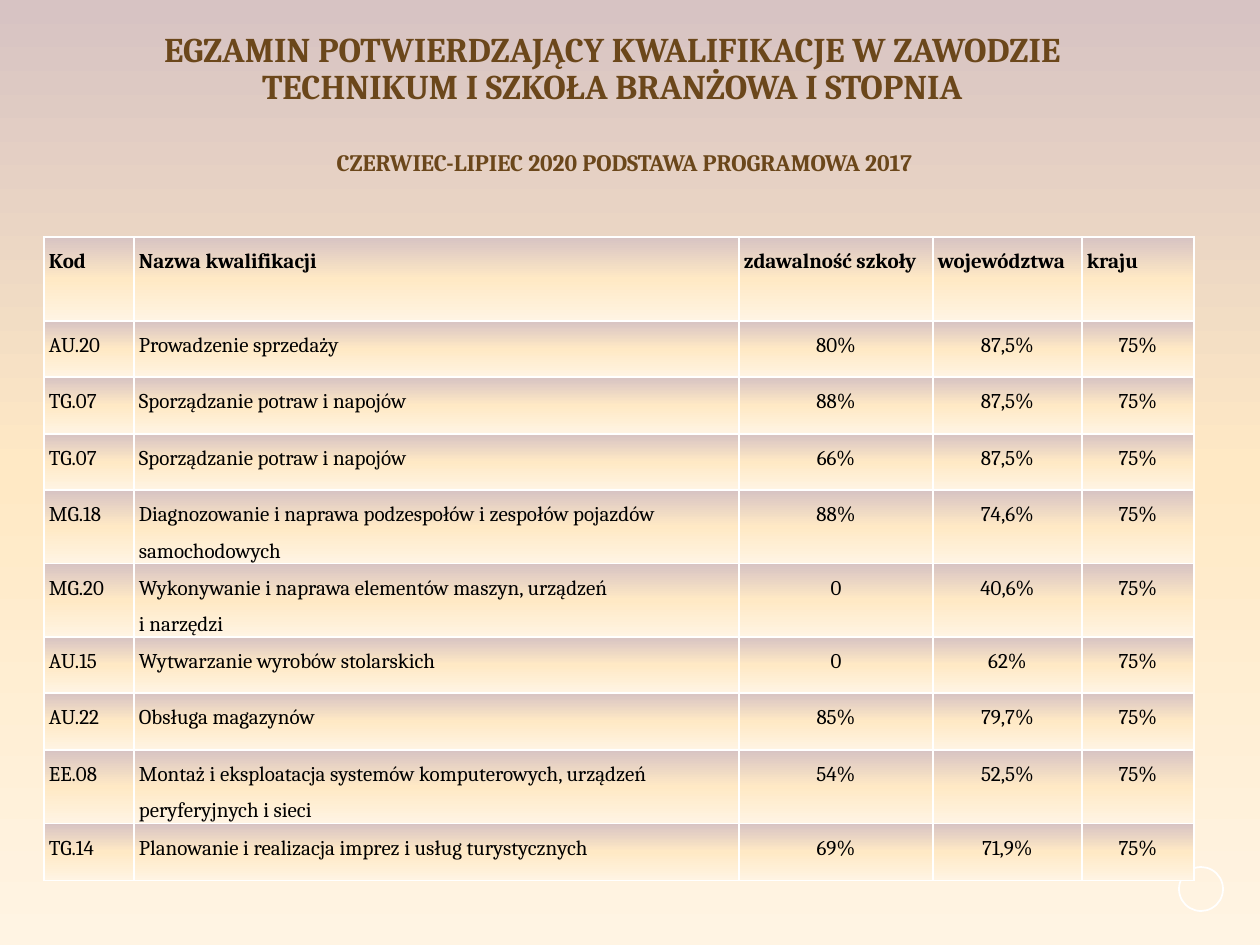
from copy import deepcopy

from lxml.etree import SubElement
from pptx import Presentation
from pptx.dml.color import RGBColor
from pptx.enum.shapes import MSO_SHAPE
from pptx.enum.text import MSO_ANCHOR, MSO_AUTO_SIZE, PP_ALIGN
from pptx.oxml.ns import qn
from pptx.util import Pt

# Content
TITLE = ("EGZAMIN POTWIERDZAJĄCY KWALIFIKACJE W ZAWODZIE\v"
         "TECHNIKUM I SZKOŁA BRANŻOWA I STOPNIA")
SUBTITLE = "CZERWIEC-LIPIEC 2020 PODSTAWA PROGRAMOWA 2017"
HEADER = ("Kod", "Nazwa kwalifikacji", "zdawalność szkoły", "województwa", "kraju")
RESULTS = [
    ("AU.20", "Prowadzenie sprzedaży", "80%", "87,5%", "75%"),
    ("TG.07", "Sporządzanie potraw i napojów", "88%", "87,5%", "75%"),
    ("TG.07", "Sporządzanie potraw i napojów", "66%", "87,5%", "75%"),
    ("MG.18", "Diagnozowanie i naprawa podzespołów i zespołów pojazdów samochodowych",
     "88%", "74,6%", "75%"),
    ("MG.20", "Wykonywanie i naprawa elementów maszyn, urządzeń\vi narzędzi",
     "0", "40,6%", "75%"),
    ("AU.15", "Wytwarzanie wyrobów stolarskich", "0", "62%", "75%"),
    ("AU.22", "Obsługa magazynów", "85%", "79,7%", "75%"),
    ("EE.08", "Montaż i eksploatacja systemów komputerowych, urządzeń peryferyjnych i sieci",
     "54%", "52,5%", "75%"),
    ("TG.14", "Planowanie i realizacja imprez i usług turystycznych", "69%", "71,9%", "75%"),
]

# Format values
GRADIENT = ((0, "D7C3C3"), (0.5, "FFE9C5"), (1, "FFF4E3"))
BROWN, BLACK, WHITE = "6B471B", "000000", "FFFFFF"
FONT = "Cambria"
COLUMN_WIDTHS = (90, 605, 194, 149, 112)
ROW_HEIGHTS = (84, 56, 57, 56, 57, 57, 56, 57, 57, 57)
SIDES = ("a:lnL", "a:lnR", "a:lnT", "a:lnB")


def px(length):
    return round(length * 914400 / 126)


def color(value):
    return RGBColor.from_string(value)


def apply(target, values):
    for name, value in values.items():
        setattr(target, name, value)


def fill_gradient(fill, element):
    """Give a fill the three-stop gradient, running from top to bottom."""
    fill.gradient()
    fill.gradient_angle = 270
    stops = element.find(".//" + qn("a:gsLst"))
    stops.append(deepcopy(stops[-1]))
    for stop, (position, value) in zip(fill.gradient_stops, GRADIENT):
        stop.position = position
        stop.color.rgb = color(value)


def write(frame, text, size, ink, bold, align, spacing):
    para = frame.paragraphs[0]
    para.text = text
    apply(para, {"alignment": align, "line_spacing": spacing,
                 "space_before": Pt(0), "space_after": Pt(0)})
    for span in para.runs:
        apply(span.font, {"name": FONT, "size": Pt(size), "bold": bold})
        span.font.color.rgb = color(ink)


def heading(box, place, text, size, spacing, anchor, bottom):
    apply(box, dict(zip(("left", "top", "width", "height"), map(px, place))))
    apply(box.text_frame, {"word_wrap": True, "auto_size": MSO_AUTO_SIZE.NONE,
                           "vertical_anchor": anchor,
                           "margin_top": 0, "margin_bottom": px(bottom)})
    write(box.text_frame, text, size, BROWN, True, PP_ALIGN.CENTER, spacing)


def add_borders(cell):
    properties = cell._tc.get_or_add_tcPr()
    for index, side in enumerate(SIDES):
        line = SubElement(properties, qn(side), w=str(Pt(1)))
        solid = SubElement(line, qn("a:solidFill"))
        SubElement(solid, qn("a:srgbClr"), val=WHITE)
        properties.insert(index, line)


deck = Presentation()
deck.slide_width, deck.slide_height = px(1260), px(945)
page = deck.slides.add_slide(deck.slide_layouts[5])
fill_gradient(page.background.fill, page._element)

# Corner ring
ring = page.shapes.add_shape(MSO_SHAPE.OVAL, px(1179), px(867), px(44), px(44))
ring.shadow.inherit = False
ring.fill.background()
ring.line.color.rgb = color(WHITE)
ring.line.width = Pt(1)

# Title
heading(page.shapes.title, (45, 53, 1134, 69), TITLE, 19.8, 0.9, MSO_ANCHOR.BOTTOM, 15)

# Results table
rows = [HEADER] + RESULTS
table = page.shapes.add_table(len(rows), len(HEADER), px(44), px(237),
                              px(sum(COLUMN_WIDTHS)), px(sum(ROW_HEIGHTS))).table
for column, width in zip(table.columns, COLUMN_WIDTHS):
    column.width = px(width)
for row, height in zip(table.rows, ROW_HEIGHTS):
    row.height = px(height)
for r, values in enumerate(rows):
    for c, text in enumerate(values):
        cell = table.cell(r, c)
        apply(cell, {"margin_left": px(5), "margin_right": px(5),
                     "margin_top": px(1), "margin_bottom": 0})
        align = PP_ALIGN.CENTER if r > 0 and c > 1 else PP_ALIGN.LEFT
        write(cell.text_frame, text, 12, BLACK, r == 0, align, 1.5)
        fill_gradient(cell.fill, cell._tc)
        add_borders(cell)

# Subtitle
subtitle = page.shapes.add_textbox(0, 0, 0, 0)
heading(subtitle, (297, 145, 655, 69), SUBTITLE, 13.5, 0.7, MSO_ANCHOR.MIDDLE, 28)

deck.save("out.pptx")
